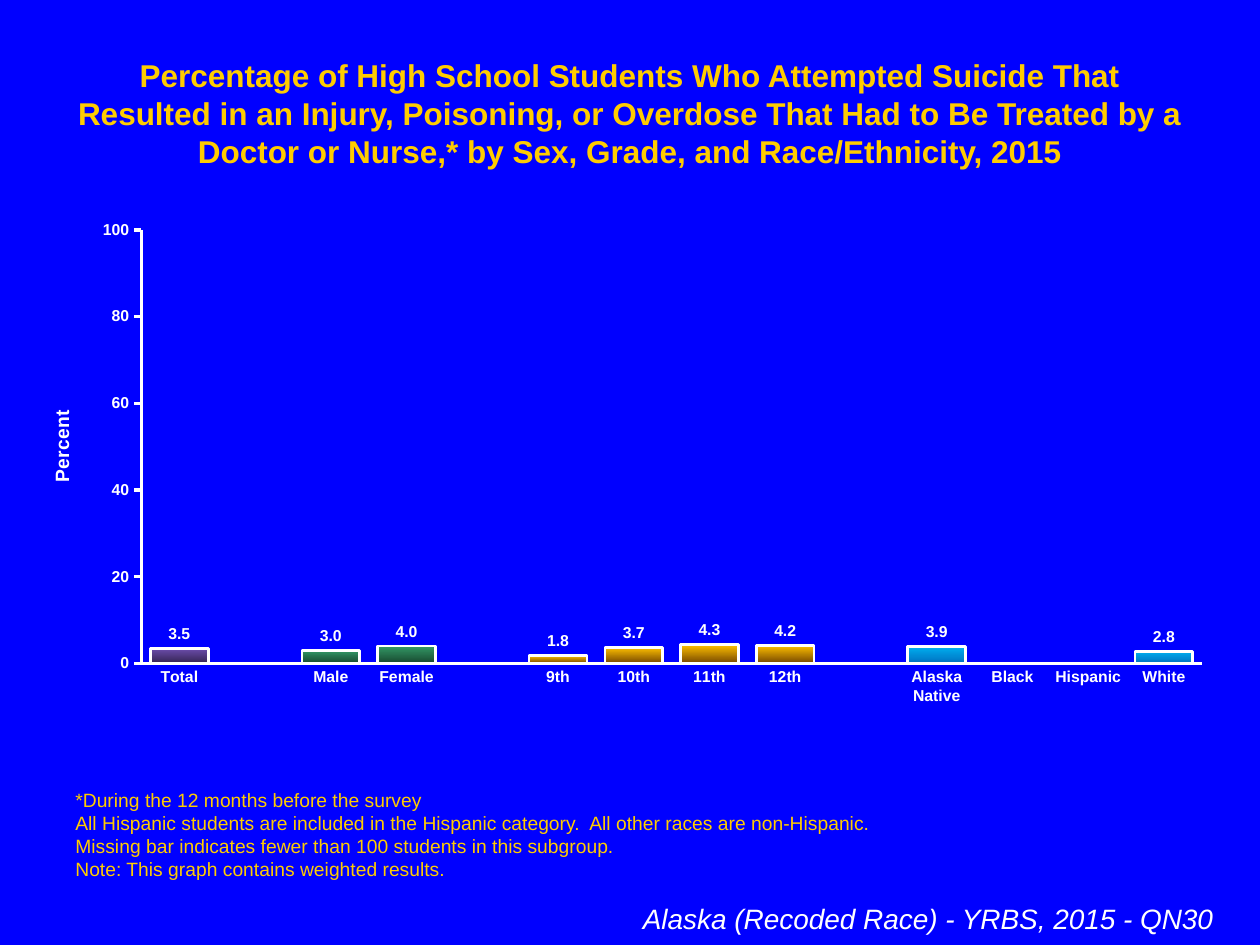
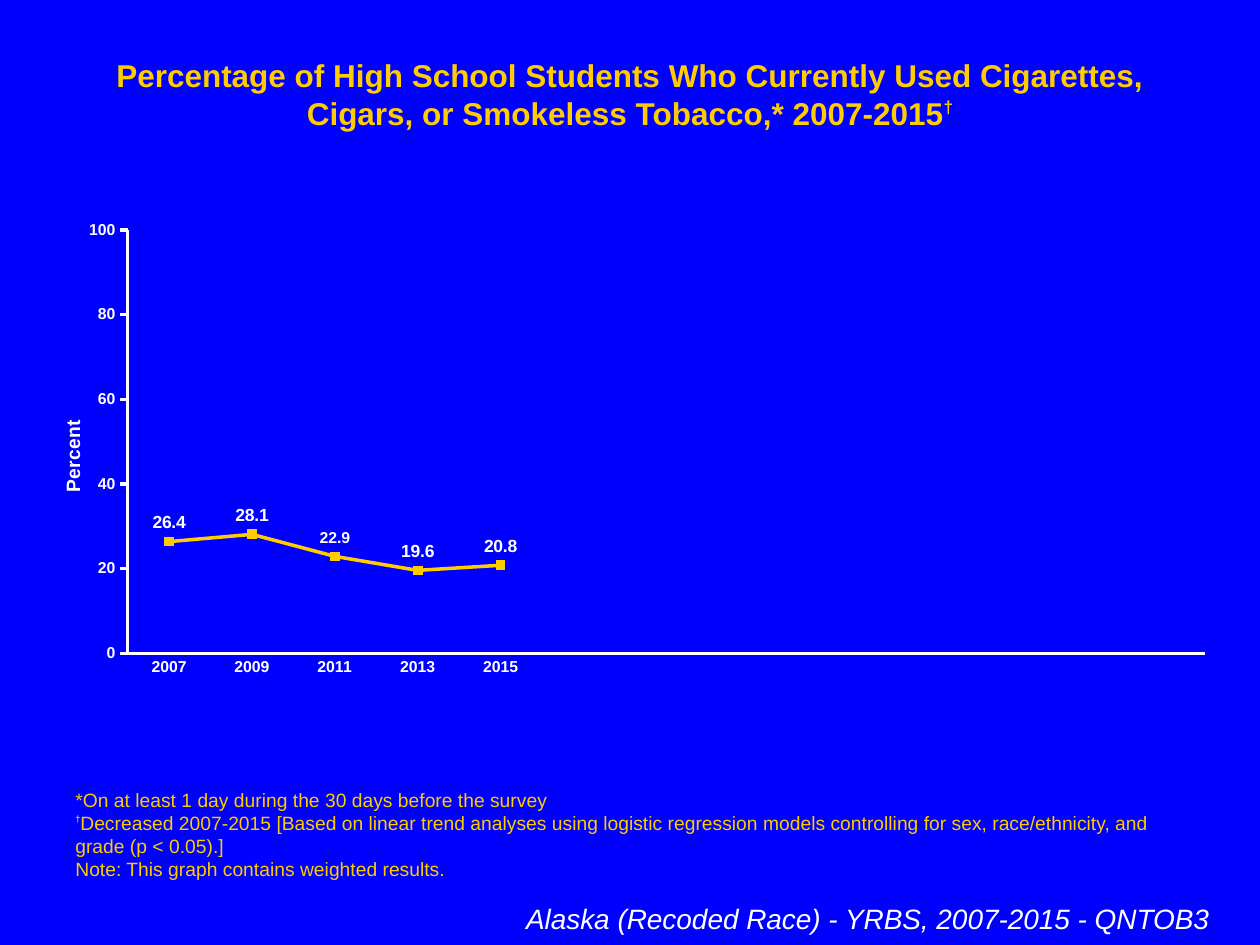
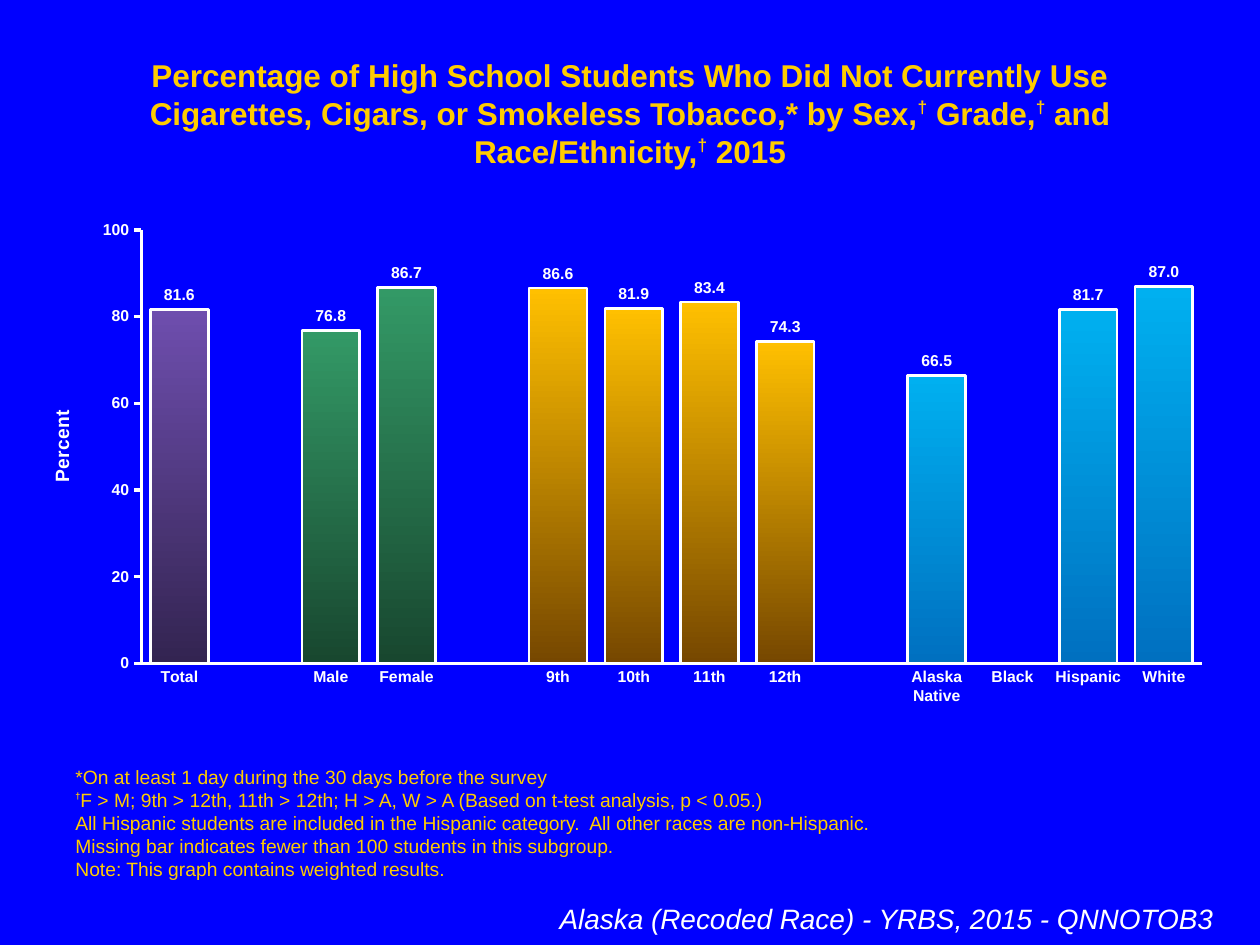
from dataclasses import dataclass
from itertools import groupby
from typing import Optional

import pptx
import pptx.chart.data
import pptx.dml.color
import pptx.enum.chart
import pptx.enum.text
import pptx.oxml
import pptx.oxml.ns
import pptx.util

EMU_PER_PX = 914400 / 126
FONT = "Arial"
DAGGER = "†"
COLORS = {"background": "0000FF", "gold": "FFCC00", "white": "FFFFFF"}
# Top and bottom colour of the bars in each group
GRADIENTS = {
    "total": ("6E4EAE", "332451"),
    "sex": ("339966", "18472F"),
    "grade": ("FFC000", "764700"),
    "race": ("00B0F0", "0070C0"),
}
GROUPS = {
    "total": ["Total"],
    "sex": ["Male", "Female"],
    "grade": ["9th", "10th", "11th", "12th"],
    "race": ["Alaska Native", "Black", "Hispanic", "White"],
}
GROUP_OF = {name: group for group, names in GROUPS.items() for name in names}
YEARS = ["2007", "2009", "2011", "2013", "2015"]
YEAR_SLOTS = 13
RACE_NOTES = [
    "All Hispanic students are included in the Hispanic category.  All other races are non-Hispanic.",
    "Missing bar indicates fewer than 100 students in this subgroup.",
]
WEIGHTED_NOTE = "Note: This graph contains weighted results."
TOBACCO_NOTE = "*On at least 1 day during the 30 days before the survey"


@dataclass(frozen=True)
class Box:
    x: int
    y: int
    w: int
    h: int

    def emu(self) -> list[int]:
        return [round(v * EMU_PER_PX) for v in (self.x, self.y, self.w, self.h)]


@dataclass(frozen=True)
class TextStyle:
    size: int
    color: str
    align: pptx.enum.text.PP_ALIGN
    anchor: pptx.enum.text.MSO_ANCHOR = pptx.enum.text.MSO_ANCHOR.TOP
    bold: bool = False
    italic: bool = False
    dagger_size: int = 9
    dagger_raise: int = 50


@dataclass(frozen=True)
class ChartFrame:
    """Chart and footer boxes, with plot and axis title places as shares of the chart."""
    chart: Box
    footer: Box
    plot: dict[str, float]
    axis_title: dict[str, float]


@dataclass(frozen=True)
class SurveySlide:
    title: str
    notes: list[str]
    footer: str
    values: list[Optional[float]]
    is_trend: bool = False


ALIGN = pptx.enum.text.PP_ALIGN
TITLE_BOX = Box(63, 50, 1134, 50)
NOTES_BOX = Box(63, 850, 1134, 37)
TITLE_STYLE = TextStyle(18, "gold", ALIGN.CENTER, bold=True, dagger_size=17, dagger_raise=40)
NOTES_STYLE = TextStyle(11, "gold", ALIGN.LEFT, pptx.enum.text.MSO_ANCHOR.BOTTOM)
FOOTER_STYLE = TextStyle(16, "white", ALIGN.RIGHT, italic=True)
BAR_FRAME = ChartFrame(
    Box(21, 210, 1205, 504), Box(42, 895, 1184, 47),
    {"x": 0.1, "y": 0.04, "w": 0.88, "h": 0.86}, {"x": 0.02, "y": 0.39},
)
TREND_FRAME = ChartFrame(
    Box(32, 210, 1197, 504), Box(242, 895, 980, 47),
    {"x": 0.08, "y": 0.04, "w": 0.9, "h": 0.84}, {"x": 0.02, "y": 0.41},
)

SLIDES = [
    SurveySlide(
        "Percentage of High School Students Who Attempted Suicide That Resulted in an Injury, "
        "Poisoning, or Overdose That Had to Be Treated by a Doctor or Nurse,* by Sex, Grade, "
        "and Race/Ethnicity, 2015",
        ["*During the 12 months before the survey", *RACE_NOTES, WEIGHTED_NOTE],
        "Alaska (Recoded Race) - YRBS, 2015 - QN30",
        [3.5, 3.0, 4.0, 1.8, 3.7, 4.3, 4.2, 3.9, None, None, 2.8],
    ),
    SurveySlide(
        "Percentage of High School Students Who Currently Used Cigarettes, Cigars, or "
        "Smokeless Tobacco,* 2007-2015†",
        [
            TOBACCO_NOTE,
            "†Decreased 2007-2015 [Based on linear trend analyses using logistic regression models "
            "controlling for sex, race/ethnicity, and grade (p < 0.05).]",
            WEIGHTED_NOTE,
        ],
        "Alaska (Recoded Race) - YRBS, 2007-2015 - QNTOB3",
        [26.4, 28.1, 22.9, 19.6, 20.8],
        is_trend=True,
    ),
    SurveySlide(
        "Percentage of High School Students Who Did Not Currently Use Cigarettes, Cigars, or "
        "Smokeless Tobacco,* by Sex,† Grade,† and Race/Ethnicity,† 2015",
        [
            TOBACCO_NOTE,
            "†F > M; 9th > 12th, 11th > 12th; H > A, W > A (Based on t-test analysis, p < 0.05.)",
            *RACE_NOTES,
            WEIGHTED_NOTE,
        ],
        "Alaska (Recoded Race) - YRBS, 2015 - QNNOTOB3",
        [81.6, 76.8, 86.7, 86.6, 81.9, 83.4, 74.3, 66.5, None, 81.7, 87.0],
    ),
]


def rgb(value: str) -> pptx.dml.color.RGBColor:
    return pptx.dml.color.RGBColor.from_string(value)


def set_font(font, size: int, color: str = "white", bold: bool = True, italic: bool = False) -> None:
    font.name = FONT
    font.size = pptx.util.Pt(size)
    font.bold = bold
    font.italic = italic
    font.color.rgb = rgb(COLORS[color])


def set_line(line, color: str, width: float = 2) -> None:
    line.color.rgb = rgb(COLORS[color])
    line.width = pptx.util.Pt(width)


def add_text(slide, box: Box, lines: list[str], style: TextStyle) -> None:
    """Add one paragraph per line, with every dagger raised."""
    tf = slide.shapes.add_textbox(*box.emu()).text_frame
    tf.word_wrap = True
    tf.auto_size = pptx.enum.text.MSO_AUTO_SIZE.SHAPE_TO_FIT_TEXT
    tf.vertical_anchor = style.anchor
    for i, line in enumerate(lines):
        p = tf.add_paragraph() if i else tf.paragraphs[0]
        p.alignment = style.align
        set_font(p.font, style.size, style.color, style.bold, style.italic)
        for is_dagger, chars in groupby(line, key=lambda char: char == DAGGER):
            r = p.add_run()
            r.text = "".join(chars)
            if is_dagger:
                r.font.size = pptx.util.Pt(style.dagger_size)
                r.font.bold = True
                r.font._element.set("baseline", str(style.dagger_raise * 1000))


def set_layout(parent, index: int, shares: dict[str, float], inner: bool = False) -> None:
    """Place a chart part by hand; index is where its layout element belongs."""
    for old in parent.findall(pptx.oxml.ns.qn("c:layout")):
        parent.remove(old)
    target = '<c:layoutTarget val="inner"/>' if inner else ""
    modes = "".join(f'<c:{key}Mode val="edge"/>' for key in "xy")
    places = "".join(f'<c:{key} val="{share}"/>' for key, share in shares.items())
    parent.insert(index, pptx.oxml.parse_xml(
        f'<c:layout {pptx.oxml.ns.nsdecls("c")}><c:manualLayout>'
        f"{target}{modes}{places}</c:manualLayout></c:layout>"
    ))


def style_axes(chart, frame: ChartFrame) -> None:
    marks = pptx.enum.chart.XL_TICK_MARK
    for axis, mark in ((chart.category_axis, marks.NONE), (chart.value_axis, marks.OUTSIDE)):
        axis.has_major_gridlines = False
        axis.major_tick_mark = mark
        axis.minor_tick_mark = marks.NONE
        set_font(axis.tick_labels.font, 9)
        set_line(axis.format.line, "white")
    axis = chart.value_axis
    axis.minimum_scale, axis.maximum_scale, axis.major_unit = 0, 100, 20
    axis.tick_labels.number_format = "#,##0"
    axis.tick_labels.number_format_is_linked = False
    tf = axis.axis_title.text_frame
    tf.text = "Percent"
    set_font(tf.paragraphs[0].font, 11)
    tf._txBody.bodyPr.set("rot", "-5400000")
    tf._txBody.bodyPr.set("vert", "horz")
    set_layout(axis.axis_title._element, 1, frame.axis_title)
    plot_area = chart._chartSpace.find(".//" + pptx.oxml.ns.qn("c:plotArea"))
    set_layout(plot_area, 0, frame.plot, inner=True)


def add_chart(slide, frame: ChartFrame, kind, categories: list[str], values: list[Optional[float]],
              label_size: int, label_position):
    data = pptx.chart.data.CategoryChartData()
    data.categories = categories
    data.add_series("Series 1", values)
    chart = slide.shapes.add_chart(kind, *frame.chart.emu(), data).chart
    chart.has_title = False
    chart.has_legend = False
    set_font(chart.font, 18, bold=False)
    style_axes(chart, frame)
    plot = chart.plots[0]
    plot.vary_by_categories = False
    plot.has_data_labels = True
    labels = plot.data_labels
    labels.show_value = True
    labels.number_format = "#,##0.0"
    labels.number_format_is_linked = False
    labels.position = label_position
    set_font(labels.font, label_size)
    return chart


def add_bar_chart(slide, values: list[Optional[float]]) -> None:
    """Draw the groups as bars with an empty slot between groups."""
    categories = []
    for names in GROUPS.values():
        categories += ([""] if categories else []) + names
    remaining = iter(values)
    slots = [next(remaining) if name else None for name in categories]
    chart = add_chart(slide, BAR_FRAME, pptx.enum.chart.XL_CHART_TYPE.COLUMN_CLUSTERED,
                      categories, slots, 9, pptx.enum.chart.XL_LABEL_POSITION.OUTSIDE_END)
    plot = chart.plots[0]
    plot.gap_width, plot.overlap = 31, 100
    for i, name in enumerate(categories):
        if not name:
            continue
        bar = plot.series[0].points[i].format
        bar.fill.gradient()
        bar.fill.gradient_angle = 270
        for stop, color in zip(bar.fill.gradient_stops, GRADIENTS[GROUP_OF[name]]):
            stop.color.rgb = rgb(color)
        set_line(bar.line, "white", 1.5)


def add_trend_chart(slide, values: list[Optional[float]]) -> None:
    spare = YEAR_SLOTS - len(YEARS)
    above = pptx.enum.chart.XL_LABEL_POSITION.ABOVE
    chart = add_chart(slide, TREND_FRAME, pptx.enum.chart.XL_CHART_TYPE.LINE_MARKERS,
                      YEARS + [""] * spare, values + [None] * spare, 10, above)
    series = chart.plots[0].series[0]
    series.smooth = False
    set_line(series.format.line, "gold")
    series.marker.style = pptx.enum.chart.XL_MARKER_STYLE.SQUARE
    series.marker.size = 5
    series.marker.format.fill.solid()
    series.marker.format.fill.fore_color.rgb = rgb(COLORS["gold"])
    set_line(series.marker.format.line, "gold", 1)
    label = series.points[YEARS.index("2011")].data_label
    set_font(label.font, 9)
    label.position = above
    # A label on one point starts a series list, which needs the shared settings too
    labels = series.data_labels
    labels.show_value = True
    labels.number_format = "#,##0.0"
    labels.number_format_is_linked = False
    labels.position = above
    set_font(labels.font, 10)


def add_survey_slide(prs, survey: SurveySlide) -> None:
    slide = prs.slides.add_slide(prs.slide_layouts[6])
    frame = TREND_FRAME if survey.is_trend else BAR_FRAME
    add_text(slide, TITLE_BOX, [survey.title], TITLE_STYLE)
    add_text(slide, NOTES_BOX, survey.notes, NOTES_STYLE)
    add_text(slide, frame.footer, [survey.footer], FOOTER_STYLE)
    draw_chart = add_trend_chart if survey.is_trend else add_bar_chart
    draw_chart(slide, survey.values)


def main() -> None:
    prs = pptx.Presentation()
    _, _, prs.slide_width, prs.slide_height = Box(0, 0, 1260, 945).emu()
    fill = prs.slide_master.background.fill
    fill.solid()
    fill.fore_color.rgb = rgb(COLORS["background"])
    for survey in SLIDES:
        add_survey_slide(prs, survey)
    prs.save("out.pptx")


if __name__ == "__main__":
    main()
